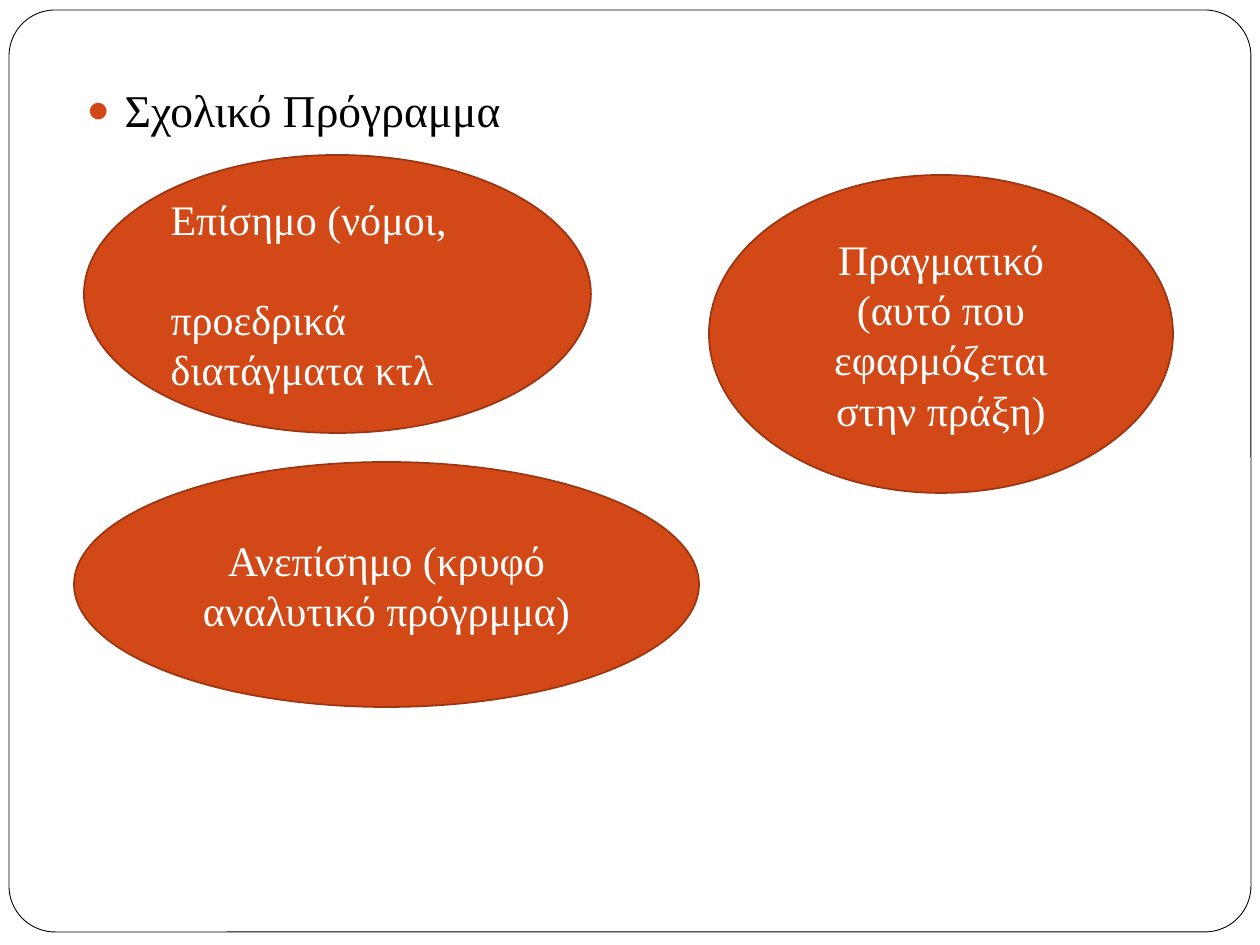
"""Build a slide with three ovals on the kinds of school programme."""
import dataclasses
import typing

import pptx
import pptx.dml.color
import pptx.enum.shapes
import pptx.enum.text
import pptx.oxml
import pptx.oxml.ns
import pptx.util

FONT = "Times New Roman"
HUES = {"paper": "FFFFFF", "ink": "000000", "fill": "D34817", "edge": "9C3511"}
KINDS = pptx.enum.shapes.MSO_SHAPE
ALIGN = pptx.enum.text.PP_ALIGN


@dataclasses.dataclass(frozen=True)
class Box:
    left: int
    top: int
    width: int
    height: int


@dataclasses.dataclass(frozen=True)
class Oval:
    box: Box
    lines: tuple[str, ...]
    align: typing.Any = ALIGN.CENTER


OVALS = (
    Oval(Box(84, 155, 507, 278),
         ("Επίσημο (νόμοι,", "προεδρικά διατάγματα κτλ"), ALIGN.LEFT),
    Oval(Box(74, 462, 625, 245), ("Ανεπίσημο (κρυφό αναλυτικό πρόγρμμα)",)),
    Oval(Box(709, 175, 464, 318),
         ("Πραγματικό (αυτό που εφαρμόζεται στην πράξη)",)),
)


def px(size: int) -> int:
    return round(size * 914400 / 126)


def hue(name: str) -> pptx.dml.color.RGBColor:
    return pptx.dml.color.RGBColor.from_string(HUES[name])


def place(shape: typing.Any, box: Box) -> None:
    shape.left, shape.top = px(box.left), px(box.top)
    shape.width, shape.height = px(box.width), px(box.height)


def write(para: typing.Any, text: str, size: int, ink: str) -> None:
    run = para.add_run()
    run.text = text
    run.font.name = FONT
    run.font.size = pptx.util.Pt(size)
    run.font.color.rgb = hue(ink)


def draw(slide: typing.Any, kind: typing.Any, box: Box,
         fill: str, edge: str, width: float) -> typing.Any:
    shape = slide.shapes.add_shape(kind, 0, 0, 0, 0)
    place(shape, box)
    shape.shadow.inherit = False
    shape.fill.solid()
    shape.fill.fore_color.rgb = hue(fill)
    shape.line.color.rgb = hue(edge)
    shape.line.width = pptx.util.Pt(width)
    return shape


def add_oval(slide: typing.Any, oval: Oval) -> None:
    shape = draw(slide, KINDS.OVAL, oval.box, "fill", "edge", 1)
    frame = shape.text_frame
    frame.word_wrap = True
    frame.vertical_anchor = pptx.enum.text.MSO_ANCHOR.MIDDLE
    for rank, line in enumerate(oval.lines):
        para = frame.add_paragraph() if rank else frame.paragraphs[0]
        para.alignment = oval.align
        if rank:
            para.space_before = pptx.util.Pt(28)
        write(para, line, 24, "paper")


def add_dot(para: typing.Any, indent: int) -> None:
    props = para._p.get_or_add_pPr()
    props.set("marL", str(px(indent)))
    props.set("indent", str(-px(indent)))
    tags = (
        f'<a:buClr {{}}><a:srgbClr val="{HUES["fill"]}"/></a:buClr>',
        '<a:buSzPct {} val="85000"/>',
        f'<a:buFont {{}} typeface="{FONT}"/>',
        '<a:buChar {} char="●"/>',
    )
    for tag in tags:
        props.append(pptx.oxml.parse_xml(tag.format(pptx.oxml.ns.nsdecls("a"))))


def fill_body(body: typing.Any) -> None:
    place(body, Box(74, 76, 1133, 743))
    frame = body.text_frame
    frame.auto_size = pptx.enum.text.MSO_AUTO_SIZE.NONE
    para = frame.paragraphs[0]
    para.space_before = pptx.util.Pt(5.8)
    add_dot(para, 38)
    write(para, "Σχολικό Πρόγραμμα", 26, "ink")


def main() -> None:
    deck = pptx.Presentation()
    deck.slide_width, deck.slide_height = px(1260), px(945)
    slide = deck.slides.add_slide(deck.slide_layouts[1])
    title, body = slide.placeholders
    title._element.getparent().remove(title._element)
    frame = draw(slide, KINDS.ROUNDED_RECTANGLE, Box(9, 10, 1242, 922),
                 "paper", "ink", 0.5)
    frame.adjustments[0] = 0.05
    body._element.addprevious(frame._element)
    fill_body(body)
    for oval in OVALS:
        add_oval(slide, oval)
    deck.save("out.pptx")


if __name__ == "__main__":
    main()
